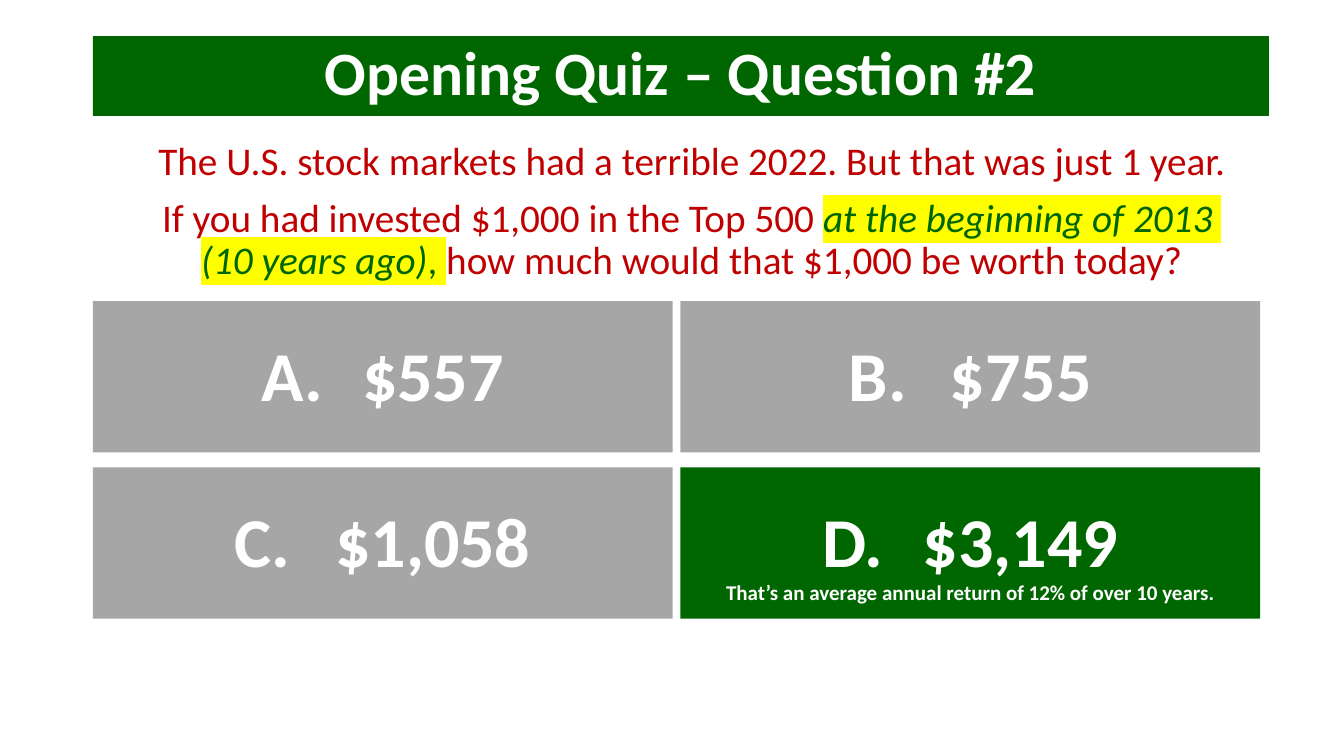
"""Build the quiz slide with its question and four answer tiles."""
import dataclasses

import lxml.etree
import pptx
import pptx.dml.color
import pptx.enum.text
import pptx.oxml.ns
import pptx.slide
import pptx.text.text
import pptx.util

Cm = pptx.util.Cm
Pt = pptx.util.Pt
RGBColor = pptx.dml.color.RGBColor
PP_ALIGN = pptx.enum.text.PP_ALIGN
MSO_ANCHOR = pptx.enum.text.MSO_ANCHOR
qn = pptx.oxml.ns.qn

GREEN = RGBColor(0x00, 0x66, 0x00)
GREY = RGBColor(0xA6, 0xA6, 0xA6)
RED = RGBColor(0xC0, 0x00, 0x00)
WHITE = RGBColor(0xFF, 0xFF, 0xFF)
YELLOW = RGBColor(0xFF, 0xFF, 0x00)
FONT = "Calibri"
LEFT = 2.34
TILE_TOP = 7.59
TILE_WIDTH, TILE_HEIGHT = 14.61, 3.81
COLUMN_STEP, ROW_STEP = 14.81, 4.19


@dataclasses.dataclass(frozen=True)
class Phrase:
    text: str
    color: RGBColor = RED
    italic: bool = False
    marked: bool = False
    break_after: bool = False


@dataclasses.dataclass(frozen=True)
class Answer:
    text: str
    column: int
    row: int
    fill: RGBColor = GREY


QUESTION = (
    (Phrase("The U.S. stock markets had a terrible 2022. But that was just 1 year."),),
    (
        Phrase("If you had invested $1,000 in the Top 500 "),
        Phrase("at the beginning of 2013 ", GREEN, True, True, True),
        Phrase("(10 years ago)", GREEN, True, True),
        Phrase(",", GREEN, False, True),
        Phrase(" ", RED, False, True),
        Phrase("how much would that $1,000 be worth today?"),
    ),
)
ANSWERS = (
    Answer("A.\t$557", 0, 0),
    Answer("C.\t$1,058", 0, 1),
    Answer("B.\t$755", 1, 0),
    Answer("D.\t$3,149\vThat’s an average annual return of 12% of over 10 years.", 1, 1, GREEN),
)


def style_run(run: pptx.text.text._Run, size: float, color: RGBColor, bold: bool = False) -> None:
    """Give a run its font, size and colour."""
    run.font.name = FONT
    run.font.size = Pt(size)
    run.font.bold = bold
    run.font.color.rgb = color


def center(paragraph: pptx.text.text._Paragraph) -> None:
    """Centre a paragraph with tight line spacing."""
    paragraph.alignment = PP_ALIGN.CENTER
    paragraph.line_spacing = 0.9


def highlight(run: pptx.text.text._Run) -> None:
    """Mark a coloured run in yellow."""
    mark = lxml.etree.Element(qn("a:highlight"))
    lxml.etree.SubElement(mark, qn("a:srgbClr"), val=str(YELLOW))
    run.font._element.find(qn("a:solidFill")).addnext(mark)


def add_heading(slide: pptx.slide.Slide) -> None:
    """Fill the title placeholder as a green banner."""
    heading = slide.shapes.title
    heading.left, heading.top = Cm(LEFT), Cm(0.91)
    heading.width, heading.height = Cm(29.64), Cm(2.01)
    heading.fill.solid()
    heading.fill.fore_color.rgb = GREEN
    frame = heading.text_frame
    frame.text = "Opening Quiz – Question #2"
    frame.auto_size = pptx.enum.text.MSO_AUTO_SIZE.NONE
    frame.vertical_anchor = MSO_ANCHOR.MIDDLE
    center(frame.paragraphs[0])
    style_run(frame.paragraphs[0].runs[0], 44, WHITE, True)


def add_question(slide: pptx.slide.Slide) -> None:
    """Write the question with its highlighted phrases."""
    frame = slide.shapes.add_textbox(Cm(LEFT), Cm(3.45), Cm(30.18), Cm(13.72)).text_frame
    frame.word_wrap = True
    for index, phrases in enumerate(QUESTION):
        paragraph = frame.add_paragraph() if index else frame.paragraphs[0]
        center(paragraph)
        if index:
            paragraph.space_before = Pt(10)
        for phrase in phrases:
            run = paragraph.add_run()
            run.text = phrase.text
            style_run(run, 28, phrase.color)
            run.font.italic = phrase.italic
            if phrase.marked:
                highlight(run)
            if phrase.break_after:
                paragraph.add_line_break()


def add_answer(slide: pptx.slide.Slide, answer: Answer) -> None:
    """Draw one answer tile at its place in the grid."""
    tile = slide.shapes.add_shape(
        pptx.enum.shapes.MSO_SHAPE.RECTANGLE,
        Cm(LEFT + answer.column * COLUMN_STEP),
        Cm(TILE_TOP + answer.row * ROW_STEP),
        Cm(TILE_WIDTH),
        Cm(TILE_HEIGHT),
    )
    tile.shadow.inherit = False
    tile.fill.solid()
    tile.fill.fore_color.rgb = answer.fill
    tile.line.fill.background()
    frame = tile.text_frame
    frame.text = answer.text.split("\v")[0]
    frame.word_wrap = True
    frame.vertical_anchor = MSO_ANCHOR.TOP
    frame.margin_top = Cm(1)
    paragraph = frame.paragraphs[0]
    paragraph.text = answer.text
    center(paragraph)
    tabs = lxml.etree.SubElement(paragraph._p.get_or_add_pPr(), qn("a:tabLst"))
    lxml.etree.SubElement(tabs, qn("a:tab"), pos=str(Cm(2.54)), algn="l")
    for run, size in zip(paragraph.runs, (50, 15)):
        style_run(run, size, WHITE, True)


def main() -> None:
    """Build and save the slide."""
    deck = pptx.Presentation()
    deck.slide_width, deck.slide_height = Cm(33.87), Cm(19.05)
    slide = deck.slides.add_slide(deck.slide_layouts[5])
    add_heading(slide)
    add_question(slide)
    for answer in ANSWERS:
        add_answer(slide, answer)
    deck.save("out.pptx")


if __name__ == "__main__":
    main()
